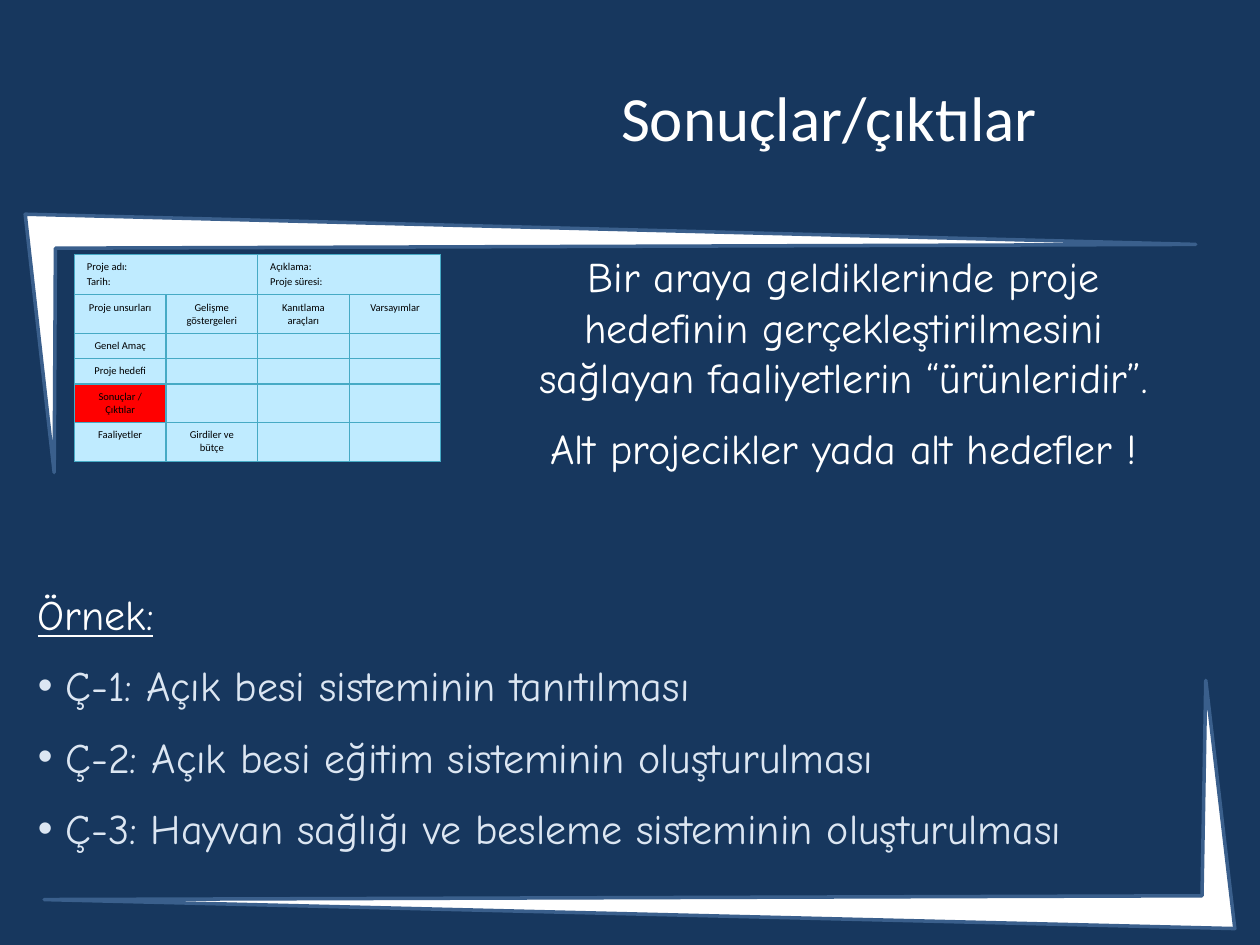
import pptx
import pptx.util
import pptx.dml.color
import pptx.enum.text
import pptx.oxml
import pptx.oxml.ns

RGB = pptx.dml.color.RGBColor
NAVY = RGB(0x17, 0x37, 0x5E)
WHITE = RGB(0xFF, 0xFF, 0xFF)
PALE = RGB(0xDC, 0xE6, 0xF2)
EDGE = RGB(0x3A, 0x5F, 0x8C)
ICE = RGB(0xBF, 0xEB, 0xFF)
TEAL = RGB(0x46, 0xAA, 0xC5)
RED = RGB(0xFF, 0x00, 0x00)
BLACK = RGB(0x00, 0x00, 0x00)

Inches = pptx.util.Inches
Pt = pptx.util.Pt
ALIGN = pptx.enum.text.PP_ALIGN
MIDDLE = pptx.enum.text.MSO_ANCHOR.MIDDLE
FIXED = pptx.enum.text.MSO_AUTO_SIZE.NONE

WIDE, HIGH = 10, 7.5
HANG = Inches(0.22)


def node(xml):
    return pptx.oxml.parse_xml(xml.replace(
        "/>", f" {pptx.oxml.ns.nsdecls('a')}/>", 1))


def write(frame, text, *, size, font="Comic Neue", color=WHITE,
          align=ALIGN.LEFT, gap=0, under=False, bullet=None):
    """Add one paragraph; the first one takes the empty paragraph."""
    para = frame.paragraphs[0]
    first = not para.runs
    if not first:
        para = frame.add_paragraph()
    if bullet is not None:
        props = para._p.get_or_add_pPr()
        hang = HANG if bullet else 0
        props.set("marL", str(hang))
        props.set("indent", str(-hang))
        props.append(node(f'<a:buChar char="{bullet}"/>' if bullet
                          else "<a:buNone/>"))
    para.alignment = align
    para.space_before = Pt(0 if first else gap)
    run = para.add_run()
    run.text = text
    face = run.font
    face.size, face.name, face.underline = Pt(size), font, under
    face.color.rgb = color


def place(shape, box):
    shape.left, shape.top, shape.width, shape.height = map(Inches, box)
    frame = shape.text_frame
    frame.word_wrap = True
    frame.auto_size = FIXED
    return frame


def wedge(slide, points):
    """Draw one thin corner of the frame."""
    spots = [(Inches(x), Inches(y)) for x, y in points]
    pen = slide.shapes.build_freeform(*spots[0])
    pen.add_line_segments(spots[1:], close=True)
    shape = pen.convert_to_shape()
    shape.shadow.inherit = False
    shape.fill.solid()
    shape.fill.fore_color.rgb = WHITE
    shape.line.color.rgb = EDGE
    shape.line.width = Pt(2)
    shape.line._get_or_add_ln().append(node("<a:round/>"))


def heading(slide, box):
    frame = place(slide.shapes.title, box)
    frame.vertical_anchor = MIDDLE
    write(frame, "Sonuçlar/çıktılar", size=36, font="Calibri",
          align=ALIGN.CENTER)


def paint(cell, color):
    cell.fill.solid()
    cell.fill.fore_color.rgb = color
    props = cell._tc.get_or_add_tcPr()
    for spot, side in enumerate(("lnL", "lnR", "lnT", "lnB")):
        line = pptx.oxml.parse_xml(
            f'<a:{side} {pptx.oxml.ns.nsdecls("a")} w="{Pt(0.75)}">'
            f'<a:solidFill><a:srgbClr val="{TEAL}"/></a:solidFill></a:{side}>')
        props.insert(spot, line)


def matrix(slide, box):
    """Draw the project planning table."""
    rows = [
        [["Proje adı:", "Tarih:"], [], ["Açıklama:", "Proje süresi:"], []],
        [["Proje unsurları"], ["Gelişme göstergeleri"],
         ["Kanıtlama araçları"], ["Varsayımlar"]],
        [["Genel Amaç"], [], [], []],
        [["Proje hedefi"], [], [], []],
        [["Sonuçlar / Çıktılar"], [], [], []],
        [["Faaliyetler"], ["Girdiler ve bütçe"], [], []],
    ]
    tall = [0.32, 0.3, 0.2, 0.2, 0.3, 0.31]
    grid = slide.shapes.add_table(len(rows), 4, *map(Inches, box)).table
    grid.first_row = grid.horz_banding = False
    for col in grid.columns:
        col.width = Inches(box[2] / 4)
    for r, (row, high) in enumerate(zip(rows, tall)):
        grid.rows[r].height = Inches(high)
        for c, lines in enumerate(row):
            cell = grid.cell(r, c)
            paint(cell, RED if (r, c) == (4, 0) else ICE)
            cell.text_frame.paragraphs[0].font.size = Pt(6)
            for text in lines:
                write(cell.text_frame, text, size=6, font="Calibri",
                      color=BLACK, gap=1.2,
                      align=ALIGN.CENTER if r else ALIGN.LEFT)
    for c in (0, 2):
        grid.cell(0, c).merge(grid.cell(0, c + 1))


def meaning(slide, box):
    frame = place(slide.shapes.add_textbox(0, 0, 0, 0), box)
    for text in ("Bir araya geldiklerinde proje hedefinin "
                 "gerçekleştirilmesini sağlayan faaliyetlerin “ürünleridir”.",
                 "Alt projecikler yada alt hedefler !"):
        write(frame, text, size=24, align=ALIGN.CENTER, gap=12)


def sample(slide, box):
    frame = place(slide.placeholders[1], box)
    write(frame, "Örnek:", size=24, under=True, bullet="")
    for text in ("Ç-1: Açık besi sisteminin tanıtılması",
                 "Ç-2: Açık besi eğitim sisteminin oluşturulması",
                 "Ç-3: Hayvan sağlığı ve besleme sisteminin oluşturulması"):
        write(frame, text, size=24, color=PALE, gap=12, bullet="•")


def main():
    deck = pptx.Presentation()
    deck.slide_width, deck.slide_height = Inches(WIDE), Inches(HIGH)
    slide = deck.slides.add_slide(deck.slide_layouts[1])
    slide.background.fill.solid()
    slide.background.fill.fore_color.rgb = NAVY

    # Frame corners
    wedge(slide, [(0.2, 1.7), (9.49, 1.94), (0.44, 1.97), (0.43, 3.75)])
    wedge(slide, [(9.8, 7.37), (0.35, 7.14), (9.54, 7.11), (9.57, 5.4)])

    # Content
    heading(slide, (3.66, 0.3, 5.84, 1.25))
    matrix(slide, (0.59, 2.02, 2.91, 1.63))
    meaning(slide, (3.9, 1.94, 5.59, 2.32))
    sample(slide, (0.2, 4.62, 9.8, 2.32))
    deck.save("out.pptx")


if __name__ == "__main__":
    main()
